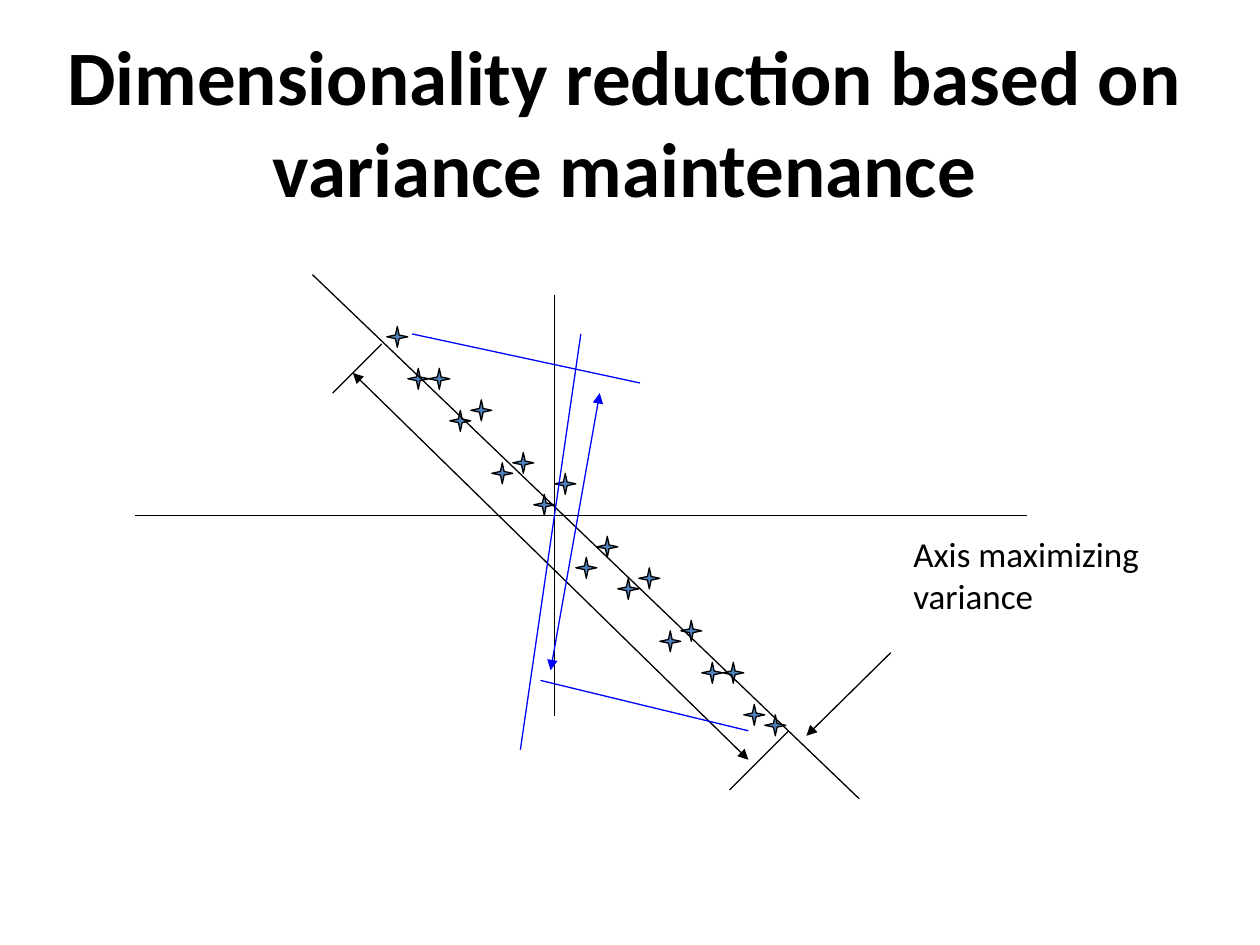
from lxml import etree
from pptx import Presentation
from pptx import util as u
from pptx.dml.color import RGBColor
from pptx.enum import shapes, text
from pptx.oxml.ns import qn

COLORS = {"ink": "000000", "blue": "0000FF", "star": "4F81BD"}
STEP = 1 / 12  # grid unit of the scatter, in inches

prs = Presentation()
prs.slide_width, prs.slide_height = u.Inches(10), u.Inches(7.5)
s = prs.slides.add_slide(prs.slide_layouts[5])


def add_line(start, end, color="ink", heads=()):
    sp = s.shapes.add_connector(shapes.MSO_CONNECTOR.STRAIGHT,
                                *[u.Inches(v) for v in (*start, *end)])
    sp.line.color.rgb = RGBColor.from_string(COLORS[color])
    sp.line.width = u.Pt(0.75)
    for tag in heads:
        etree.SubElement(sp.line._get_or_add_ln(), qn(f"a:{tag}"), type="triangle")
    etree.SubElement(sp._element.spPr, qn("a:effectLst"))


def write(sp, words, box, anchor, align, font):
    for name, value in zip(("left", "top", "width", "height"), box):
        setattr(sp, name, u.Inches(value))
    tf = sp.text_frame
    tf.word_wrap = True
    tf.vertical_anchor = anchor
    p = tf.paragraphs[0]
    p.alignment = align
    r = p.add_run()
    r.text = words
    for name, value in font.items():
        setattr(r.font, name, value)
    r.font.color.rgb = RGBColor.from_string(COLORS["ink"])


# Title
write(s.shapes.title, "Dimensionality reduction based on variance maintenance",
      (0.43, 0.29, 9.06, 1.34), text.MSO_ANCHOR.MIDDLE, text.PP_ALIGN.CENTER,
      {"name": "Calibri", "size": u.Pt(44), "bold": True})

# Coordinate axes
add_line((4.4, 2.34), (4.4, 5.68))
add_line((1.07, 4.09), (8.15, 4.09))

# Data points: one every two columns, each at its own grid row
rows = [0, 4, 4, 8, 7, 13, 12, 16, 14, 22, 20, 24, 23, 29, 28, 32, 32, 36, 37]
for i, row in enumerate(rows):
    sp = s.shapes.add_shape(shapes.MSO_SHAPE.STAR_4_POINT,
                            u.Inches(3.07 + 2 * i * STEP), u.Inches(2.59 + row * STEP),
                            u.Inches(2 * STEP), u.Inches(2 * STEP))
    sp.adjustments[0] = 0.125
    sp.shadow.inherit = False
    sp.fill.solid()
    sp.fill.fore_color.rgb = RGBColor.from_string(COLORS["star"])
    sp.line.color.rgb = RGBColor.from_string(COLORS["ink"])
    sp.line.width = u.Pt(0.75)

# Axis of maximum variance with its pointer and label
add_line((6.82, 6.34), (2.48, 2.18))
add_line((7.07, 5.18), (6.4, 5.84), heads=["tailEnd"])
sp = s.shapes.add_textbox(0, 0, 0, 0)
write(sp, "Axis maximizing variance", (7.15, 4.18, 2.42, 0.77),
      text.MSO_ANCHOR.TOP, text.PP_ALIGN.LEFT, {"name": "Calibri", "size": u.Pt(20)})
sp.text_frame.auto_size = text.MSO_AUTO_SIZE.SHAPE_TO_FIT_TEXT
sp.text_frame.paragraphs[0].space_before = u.Pt(10)

# Spread along the maximum-variance axis
both = ["headEnd", "tailEnd"]
add_line((2.8, 2.96), (5.94, 6.03), heads=both)
add_line((3.03, 2.73), (2.64, 3.12))
add_line((6.26, 5.8), (5.79, 6.27))

# Alternative axis and its smaller spread
add_line((4.61, 2.65), (4.13, 5.95), "blue")
add_line((3.27, 2.65), (5.08, 3.04), "blue")
add_line((5.94, 5.8), (4.29, 5.4), "blue")
add_line((4.76, 3.12), (4.37, 5.32), "blue", both)

prs.save("out.pptx")
